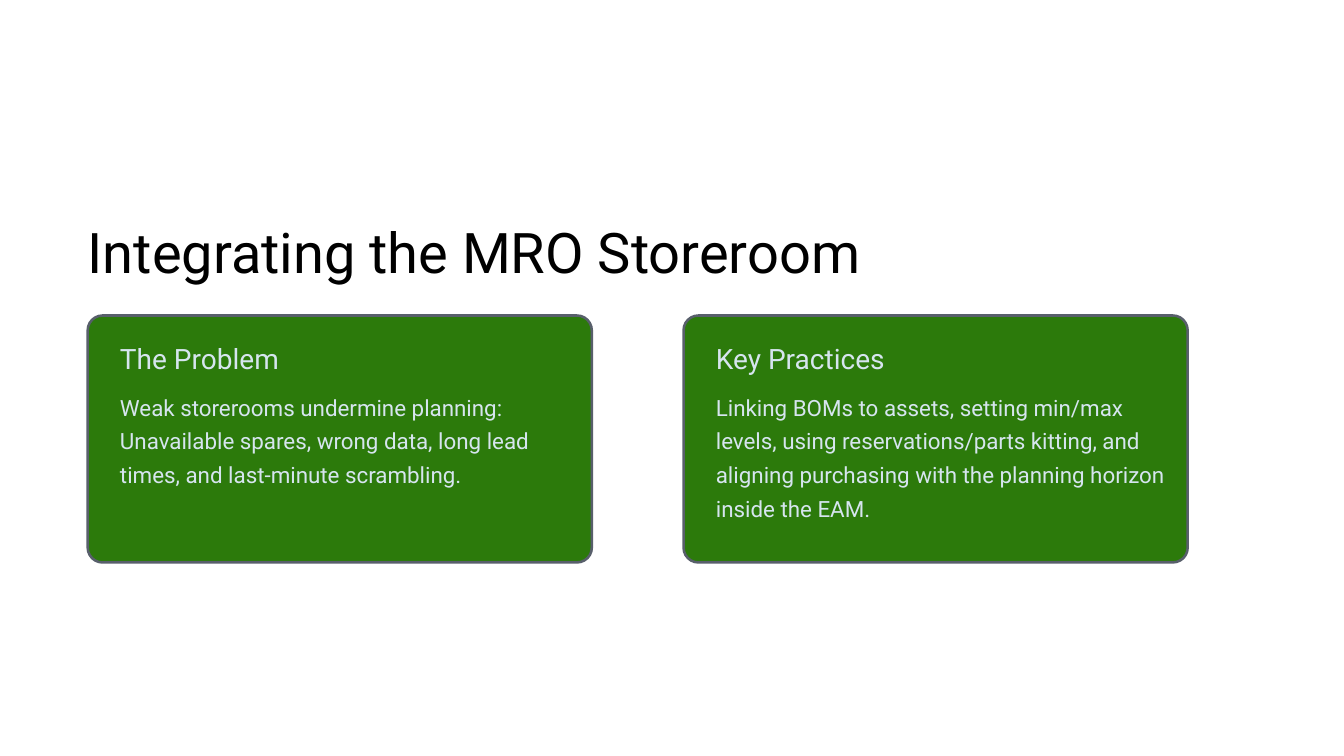
"""Build the slide on integrating the MRO storeroom."""
import dataclasses

import pptx
import pptx.dml.color
import pptx.enum.shapes
import pptx.enum.text
import pptx.util

Inches = pptx.util.Inches
Pt = pptx.util.Pt


@dataclasses.dataclass(frozen=True)
class Theme:
    font: str = "Roboto"
    ink: str = "000000"
    pale: str = "D6E5EF"
    green: str = "2C7A0B"
    edge: str = "585F6B"
    title: tuple = (40, 50)
    head: tuple = (20, 25)
    body: tuple = (16, 24)


class Deck:
    def __init__(self, theme):
        self.theme = theme
        self.show = pptx.Presentation()
        self.show.slide_width = Inches(13.33)
        self.show.slide_height = Inches(7.5)
        self.slide = self.show.slides.add_slide(self.show.slide_layouts[5])

    def color(self, code):
        return pptx.dml.color.RGBColor.from_string(code)

    def label(self, shape, text, scale, code):
        size, line = scale
        frame = shape.text_frame
        frame.word_wrap = True
        frame.auto_size = pptx.enum.text.MSO_AUTO_SIZE.NONE
        frame.vertical_anchor = pptx.enum.text.MSO_ANCHOR.TOP
        frame.margin_left = frame.margin_right = 0
        frame.margin_top = frame.margin_bottom = 0
        para = frame.paragraphs[0]
        para.alignment = pptx.enum.text.PP_ALIGN.LEFT
        para.line_spacing = Pt(line)
        run = para.add_run()
        run.text = text
        run.font.name = self.theme.font
        run.font.size = Pt(size)
        run.font.color.rgb = self.color(code)

    def title(self, text, left, top, width, height):
        shape = self.slide.shapes.title
        shape.left, shape.top = Inches(left), Inches(top)
        shape.width, shape.height = Inches(width), Inches(height)
        self.label(shape, text, self.theme.title, self.theme.ink)

    def text(self, text, scale, left, top, width, height):
        box = self.slide.shapes.add_textbox(
            Inches(left), Inches(top), Inches(width), Inches(height))
        self.label(box, text, scale, self.theme.pale)

    def panel(self, left, top, width, height):
        shape = self.slide.shapes.add_shape(
            pptx.enum.shapes.MSO_SHAPE.ROUNDED_RECTANGLE,
            Inches(left), Inches(top), Inches(width), Inches(height))
        shape.adjustments[0] = 0.06
        shape.shadow.inherit = False
        shape.fill.solid()
        shape.fill.fore_color.rgb = self.color(self.theme.green)
        shape.line.color.rgb = self.color(self.theme.edge)
        shape.line.width = Pt(1.8)

    def card(self, left, top, head, body):
        inset = left + 0.32
        self.panel(left, top, 5, 2.45)
        self.text(head, self.theme.head, inset, top + 0.24, 2.79, 0.35)
        self.text(body, self.theme.body, inset, top + 0.71, 4.55, 1.35)


def main():
    deck = Deck(Theme())
    left, step = 0.87, 5.91
    deck.title("Integrating the MRO Storeroom", left, 2.13, 8.22, 0.7)
    cards = [
        ("The Problem",
         "Weak storerooms undermine planning: Unavailable spares, wrong data, "
         "long lead times, and last-minute scrambling."),
        ("Key Practices",
         "Linking BOMs to assets, setting min/max levels, using "
         "reservations/parts kitting, and aligning purchasing with the "
         "planning horizon inside the EAM."),
    ]
    for col, (head, body) in enumerate(cards):
        deck.card(left + col * step, 3.13, head, body)
    deck.show.save("out.pptx")


if __name__ == "__main__":
    main()
